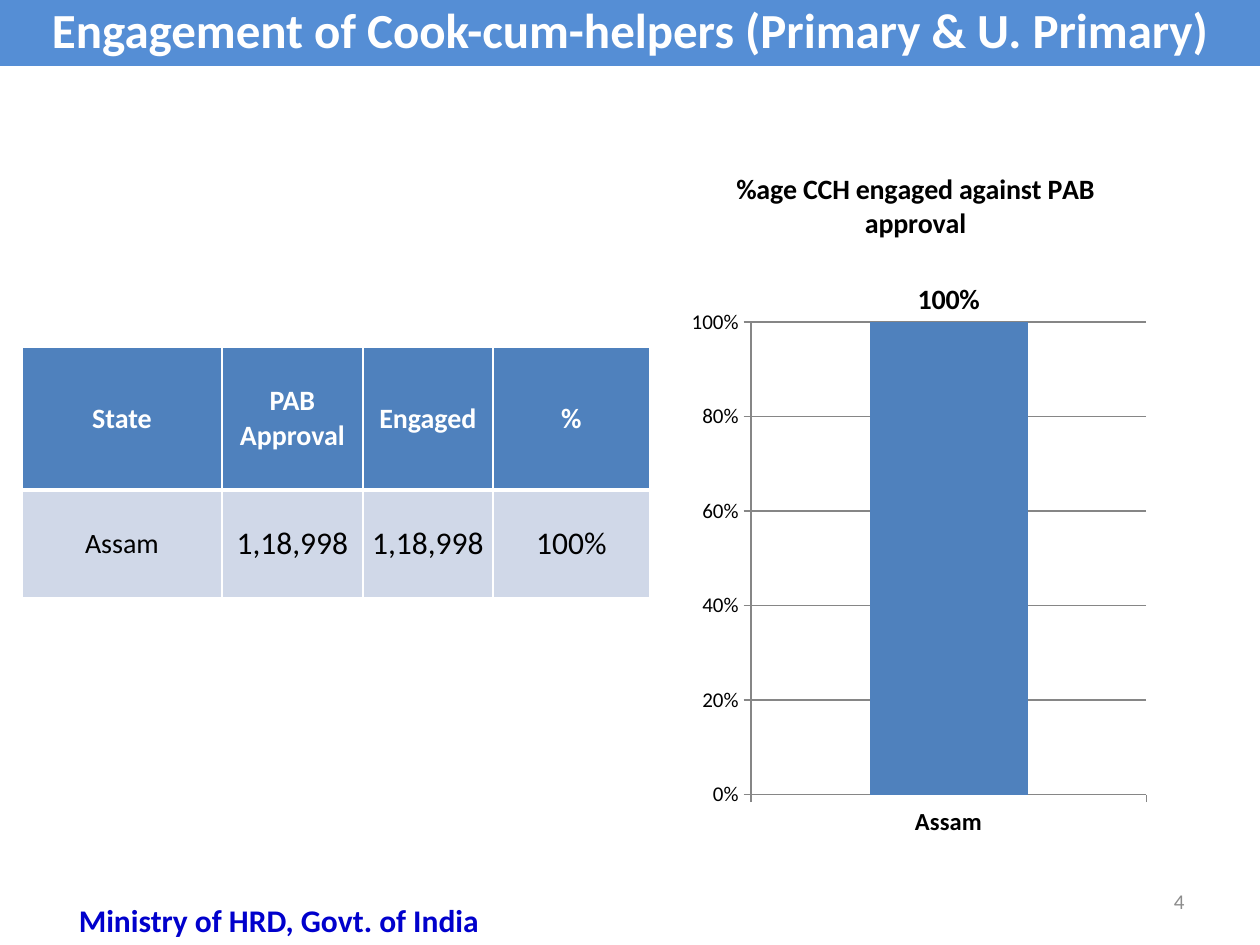
from lxml import etree
from pptx import Presentation
from pptx.chart.data import CategoryChartData
from pptx.dml.color import RGBColor
from pptx.enum.chart import XL_CHART_TYPE, XL_LABEL_POSITION, XL_TICK_MARK
from pptx.enum.shapes import MSO_SHAPE
from pptx.enum.text import MSO_ANCHOR, PP_ALIGN
from pptx.oxml import parse_xml
from pptx.oxml.ns import nsdecls, qn
from pptx.util import Emu, Pt

COLUMN = XL_CHART_TYPE.COLUMN_CLUSTERED
OUTER = XL_LABEL_POSITION.OUTSIDE_END
TICK = XL_TICK_MARK.OUTSIDE
RECT = MSO_SHAPE.RECTANGLE
TOP, MIDDLE = MSO_ANCHOR.TOP, MSO_ANCHOR.MIDDLE
CENTER, RIGHT = PP_ALIGN.CENTER, PP_ALIGN.RIGHT

WHITE = RGBColor(0xFF, 0xFF, 0xFF)
BLACK = RGBColor(0, 0, 0)
SKY = RGBColor(0x55, 0x8E, 0xD5)
BLUE = RGBColor(0x4F, 0x81, 0xBD)
PALE = RGBColor(0xD0, 0xD8, 0xE8)
NAVY = RGBColor(0, 0, 0xCC)
GRAY = RGBColor(0x8C, 0x8C, 0x8C)
RULE = RGBColor(0x86, 0x86, 0x86)
FACE = "Calibri"
SCALE = 914400 / 126


def px(*nums):
    return [Emu(round(n * SCALE)) for n in nums]


def style(font, size, color=BLACK, bold=False):
    font.name = FACE
    font.size = Pt(size)
    font.bold = bold
    font.color.rgb = color


def write(frame, text, size=18, color=BLACK, bold=False, align=CENTER, space=1.0):
    frame.word_wrap = True
    para = frame.paragraphs[0]
    para.alignment = align
    para.line_spacing = space
    run = para.add_run()
    run.text = text
    style(run.font, size, color, bold)


def banner(slide, box, text):
    bar = slide.shapes.add_shape(RECT, *px(*box))
    bar.shadow.inherit = False
    bar.fill.solid()
    bar.fill.fore_color.rgb = SKY
    bar.line.fill.background()
    bar.text_frame.vertical_anchor = MIDDLE
    write(bar.text_frame, text, size=28, color=WHITE, bold=True, space=0.9)


def note(slide, box, text, anchor=TOP, **kind):
    frame = slide.shapes.add_textbox(*px(*box)).text_frame
    frame.vertical_anchor = anchor
    write(frame, text, **kind)


def border(cell, low):
    props = cell._tc.get_or_add_tcPr()
    for spot, side in enumerate("LRTB"):
        width = Pt(low if side == "B" else 1)
        props.insert(spot, parse_xml(
            f'<a:ln{side} {nsdecls("a")} w="{width}"><a:solidFill>'
            f'<a:srgbClr val="{WHITE}"/></a:solidFill></a:ln{side}>'))


def grid(slide, box, rows, wide, high):
    table = slide.shapes.add_table(len(rows), len(wide), *px(*box)).table
    for col, size in zip(table.columns, px(*wide)):
        col.width = size
    for row, size in zip(table.rows, px(*high)):
        row.height = size
    for r, row in enumerate(rows):
        head = r == 0
        for c, text in enumerate(row):
            cell = table.cell(r, c)
            cell.margin_left = cell.margin_right = 0
            cell.margin_top = cell.margin_bottom = 0
            cell.vertical_anchor = MIDDLE
            cell.fill.solid()
            cell.fill.fore_color.rgb = BLUE if head else PALE
            border(cell, 3 if head else 1)
            write(cell.text_frame, text, size=16 if head or c == 0 else 18,
                  color=WHITE if head else BLACK, bold=head)


def layout(host, spot, **vals):
    for old in host.findall(qn("c:layout")):
        host.remove(old)
    node = parse_xml(f'<c:layout {nsdecls("c")}><c:manualLayout/></c:layout>')
    for tag, val in vals.items():
        etree.SubElement(node[0], qn(f"c:{tag}")).set("val", str(val))
    host.insert(spot, node)


def graph(slide, box, title, cats, vals):
    data = CategoryChartData(number_format="0%")
    data.categories = cats
    data.add_series("Series 1", vals)
    chart = slide.shapes.add_chart(COLUMN, *px(*box), data).chart
    style(chart.font, 18)
    chart.has_legend = False
    chart.has_title = True
    write(chart.chart_title.text_frame, title, size=16, bold=True)
    layout(chart.chart_title._element, 1, xMode="edge", yMode="edge", x=0.12, y=0.04)
    layout(chart._chartSpace.chart.plotArea, 0, layoutTarget="inner",
           xMode="edge", yMode="edge", x=0.16, y=0.26, w=0.8, h=0.66)

    for axis, size, bold in ((chart.category_axis, 14, True), (chart.value_axis, 12, False)):
        style(axis.tick_labels.font, size, bold=bold)
        axis.major_tick_mark = TICK
        axis.format.line.color.rgb = RULE
    scale = chart.value_axis
    scale.minimum_scale, scale.maximum_scale, scale.major_unit = 0, 1, 0.2
    scale.tick_labels.number_format = "0%"
    scale.tick_labels.number_format_is_linked = False
    scale.major_gridlines.format.line.color.rgb = RULE

    plot = chart.plots[0]
    plot.gap_width = 150
    plot.vary_by_categories = False
    fill = plot.series[0].format.fill
    fill.solid()
    fill.fore_color.rgb = BLUE
    plot.has_data_labels = True
    labels = plot.data_labels
    labels.show_value = True
    labels.number_format = "0%"
    labels.number_format_is_linked = False
    labels.position = OUTER
    style(labels.font, 16, bold=True)


def main():
    deck = Presentation()
    deck.slide_width, deck.slide_height = px(1260, 945)
    slide = deck.slides.add_slide(deck.slide_layouts[6])
    banner(slide, (0, 0, 1260, 66), "Engagement of Cook-cum-helpers (Primary & U. Primary)")
    rows = (("State", "PAB Approval", "Engaged", "%"),
            ("Assam", "1,18,998", "1,18,998", "100%"))
    grid(slide, (22, 347, 628, 251), rows, (200, 141, 130, 157), (143, 108))
    graph(slide, (672, 136, 494, 716), "%age CCH engaged against PAB approval", ["Assam"], [1])
    note(slide, (903, 876, 294, 50), "4", anchor=MIDDLE, size=12, color=GRAY, align=RIGHT)
    note(slide, (32, 895, 494, 50), "Ministry of HRD, Govt. of India", color=NAVY, bold=True)
    deck.save("out.pptx")


if __name__ == "__main__":
    main()
